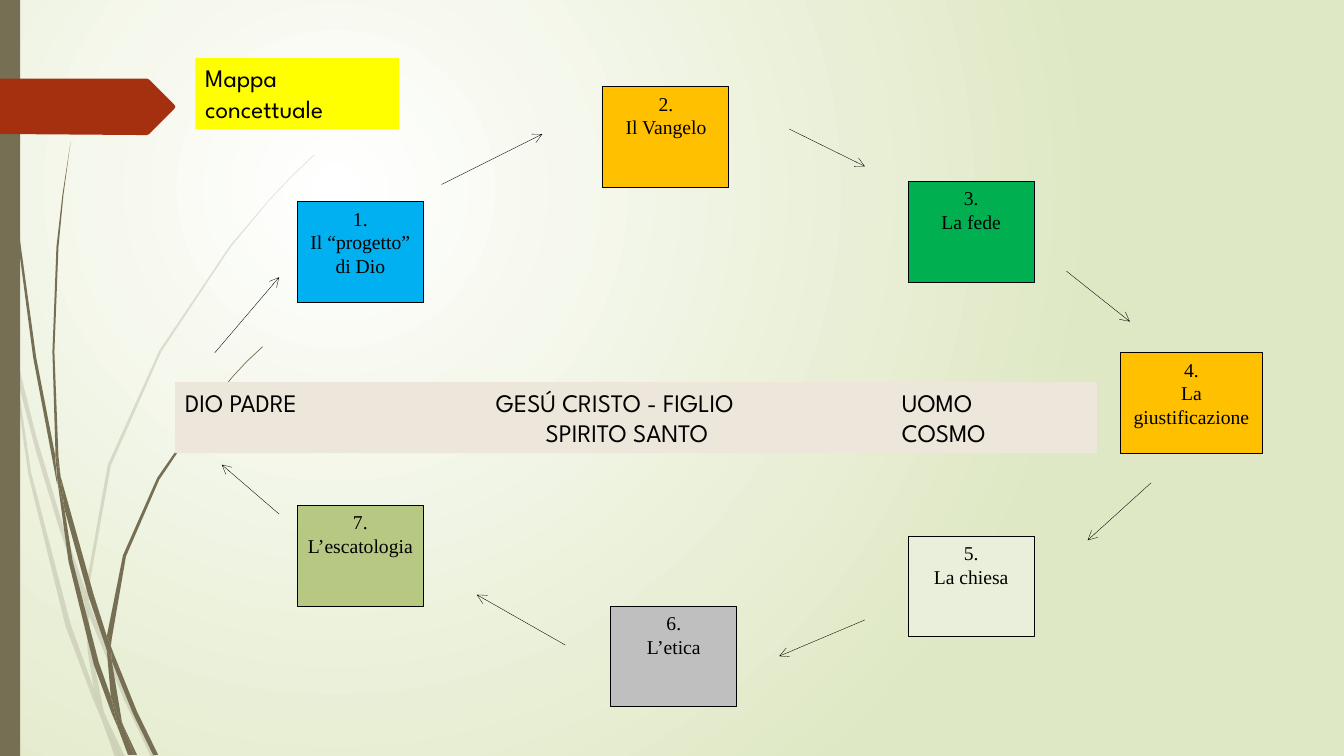
from lxml import etree
from pptx import Presentation
from pptx.dml.color import RGBColor
from pptx.enum import shapes, text
from pptx.oxml import ns
from pptx.util import Pt

BLACK = RGBColor(0x00, 0x00, 0x00)
WHITE = RGBColor(0xFF, 0xFF, 0xFF)
PALE_GREEN = RGBColor(0xDF, 0xE8, 0xC4)
OLIVE = RGBColor(0x76, 0x6F, 0x54)
RUST = RGBColor(0xA5, 0x30, 0x10)
YELLOW = RGBColor(0xFF, 0xFF, 0x00)
SAND = RGBColor(0xED, 0xE6, 0xDB)
BLUE = RGBColor(0x00, 0xB0, 0xF0)
AMBER = RGBColor(0xFF, 0xC0, 0x00)
GREEN = RGBColor(0x00, 0xB0, 0x50)
MINT = RGBColor(0xEA, 0xEF, 0xDB)
GREY = RGBColor(0xBF, 0xBF, 0xBF)
MOSS = RGBColor(0xB6, 0xC8, 0x82)

BODY_FONT = "Times New Roman"
TITLE_FONT = "League Spartan"

STEM_UNIT = Pt(0.72)
FAINT_STEMS = [
    [(11, 350), (9, 322), (0, 282), (0, 299), (10, 344)],
    [(58, 522), (84, 599), (85, 586), (62, 520), (36, 433), (14, 345), (17, 376), (36, 449)],
    [(92, 607), (88, 596), (88, 610), (123, 694), (150, 751), (155, 751), (127, 692)],
    [(119, 751), (124, 751), (105, 711)],
    [(93, 683), (70, 619), (31, 469), (17, 376), (11, 350), (28, 470), (65, 621),
     (92, 693), (101, 714), (99, 707)],
    [(84, 599), (87, 646), (93, 683), (96, 692), (105, 711), (103, 706), (91, 646),
     (88, 610), (88, 608)],
    [(88, 584), (110, 462), (160, 349), (229, 245), (268, 198), (290, 175), (312, 154),
     (312, 153), (289, 175), (268, 197), (228, 244), (158, 348), (107, 461), (85, 584),
     (85, 586), (88, 596)],
    [(101, 714), (114, 751), (119, 751)],
    [(88, 608), (88, 610), (88, 596), (85, 586), (84, 599)],
    [(96, 692), (93, 683), (99, 707), (101, 714), (119, 751), (105, 711)],
]
SOLID_STEMS = [
    [(7, 110), (17, 233), (33, 355), (56, 477), (57, 481), (55, 457), (55, 453),
     (36, 355), (19, 232), (8, 109), (5, 48), (4, 0), (3, 0), (4, 48)],
    [(88, 592), (106, 645), (106, 633), (106, 631), (93, 590), (60, 472), (64, 505)],
    [(113, 649), (110, 641), (111, 656), (132, 708), (152, 749), (157, 749), (136, 706)],
    [(110, 691), (98, 657), (72, 556), (64, 505), (57, 477), (68, 557), (93, 659),
     (111, 708), (117, 722), (116, 717)],
    [(60, 472), (58, 453), (54, 349), (58, 245), (63, 193), (70, 141), (62, 193),
     (56, 245), (52, 349), (55, 449)],
    [(133, 749), (136, 749), (122, 719)],
    [(57, 477), (64, 505), (60, 472), (55, 449), (55, 453)],
    [(111, 633), (125, 552), (158, 476), (205, 406), (231, 374), (245, 359), (261, 344),
     (260, 344), (245, 358), (231, 373), (204, 405), (156, 474), (122, 551), (106, 631),
     (110, 641)],
    [(117, 722), (127, 749), (131, 749)],
    [(106, 645), (110, 691), (116, 706), (122, 719), (121, 716), (111, 656), (109, 651)],
    [(106, 645), (109, 651), (111, 656), (110, 641), (106, 631), (106, 633)],
    [(116, 706), (110, 691), (116, 717), (117, 722), (130, 749), (133, 749), (122, 719)],
]
SIGN = [(173, 108), (148, 133), (146, 134), (136, 134), (0, 133), (0, 78), (136, 78),
        (146, 78), (148, 79), (173, 104), (174, 106)]
STEPS = [
    (212.4, 144, 90, BLUE, "Il “progetto” di Dio"),
    (430.7, 61.9, 90, AMBER, "Il Vangelo"),
    (648.7, 129.6, 90, GREEN, "La fede"),
    (800.6, 252, 101, AMBER, "La giustificazione"),
    (648.7, 383, 90, MINT, "La chiesa"),
    (436.3, 433, 90, GREY, "L’etica"),
    (212.4, 361, 90, MOSS, "L’escatologia"),
]
ARROWS = [
    (153.4, 252, 199.4, 198), (315.4, 131.8, 387.4, 95.8),
    (563.8, 92.2, 617.8, 118.8), (761.8, 193.7, 807.1, 229.7),
    (822.2, 344.9, 776.9, 385.9), (617.8, 442.8, 556.6, 468.7),
    (403.9, 460.8, 340.6, 424.8), (199.4, 367.2, 158.4, 331.9),
]


def paint_background(page):
    """Fill the page with a gradient that glows from the upper left."""
    fill = page.background.fill
    fill.gradient()
    for stop, colour in zip(fill.gradient_stops, (WHITE, PALE_GREEN)):
        stop.color.rgb = colour
    linear = next(page.background._cSld.iter(ns.qn("a:lin")))
    glow = etree.Element(ns.qn("a:path"), path="circle")
    etree.SubElement(glow, ns.qn("a:fillToRect"), l="50000", t="50000", r="100000", b="100000")
    linear.getparent().replace(linear, glow)


def paint(shape, colour, outline=None):
    """Give a shape a flat fill and an optional thin outline."""
    shape.shadow.inherit = False
    shape.fill.solid()
    shape.fill.fore_color.rgb = colour
    if outline is None:
        shape.line.fill.background()
    else:
        shape.line.color.rgb = outline
        shape.line.width = Pt(0.75)


def add_outline(page, corners, colour, opacity=100):
    """Draw a closed, filled outline through the corners."""
    builder = page.shapes.build_freeform(*corners[0], scale=STEM_UNIT)
    builder.add_line_segments(corners[1:])
    outline = builder.convert_to_shape()
    paint(outline, colour)
    if opacity < 100:
        tint = next(outline._element.spPr.iter(ns.qn("a:srgbClr")))
        etree.SubElement(tint, ns.qn("a:alpha"), val=str(opacity * 1000))


def add_box(page, left, top, width, height, colour, outline=None):
    """Add a filled rectangle whose text starts at the top."""
    box = page.shapes.add_shape(
        shapes.MSO_SHAPE.RECTANGLE, Pt(left), Pt(top), Pt(width), Pt(height))
    paint(box, colour, outline)
    box.text_frame.word_wrap = True
    box.text_frame.vertical_anchor = text.MSO_ANCHOR.TOP
    return box


def write(box, lines, font, size, alignment, tab_rows=()):
    """Write one paragraph a line, with left tab stops where given."""
    box.text_frame.text = "\n".join(lines)
    for index, para in enumerate(box.text_frame.paragraphs):
        para.alignment = alignment
        if tab_rows:
            tabs = etree.SubElement(para._p.get_or_add_pPr(), ns.qn("a:tabLst"))
            for stop in tab_rows[index]:
                etree.SubElement(tabs, ns.qn("a:tab"), pos=str(Pt(stop)), algn="l")
        para.font.name = font
        para.font.size = Pt(size)
        para.font.color.rgb = BLACK


def add_arrow(page, *ends):
    """Draw a hairline arrow from the first point to the second."""
    arrow = page.shapes.add_connector(shapes.MSO_CONNECTOR.STRAIGHT, *map(Pt, ends))
    arrow.line.color.rgb = BLACK
    arrow.line.width = Pt(0.25)
    etree.SubElement(arrow.line._get_or_add_ln(), ns.qn("a:tailEnd"), type="arrow")
    etree.SubElement(arrow._element.spPr, ns.qn("a:effectLst"))


def main():
    """Build the concept map and save it."""
    deck = Presentation()
    deck.slide_width, deck.slide_height = Pt(960), Pt(540)
    page = deck.slides.add_slide(deck.slide_layouts[6])
    left = text.PP_ALIGN.LEFT

    paint_background(page)
    for corners in FAINT_STEMS:
        add_outline(page, corners, OLIVE, opacity=20)
    for corners in SOLID_STEMS:
        add_outline(page, corners, OLIVE)
    add_box(page, 0, 0, 14.4, 540, OLIVE)
    add_outline(page, SIGN, RUST)

    for number, (x, y, width, colour, label) in enumerate(STEPS, 1):
        box = add_box(page, x, y, width, 72, colour, BLACK)
        write(box, [f"{number}.", label], BODY_FONT, 14, text.PP_ALIGN.CENTER)
    for ends in ARROWS:
        add_arrow(page, *ends)

    band = add_box(page, 125.2, 272.9, 658.5, 50.9, SAND)
    write(band, ["DIO PADRE\tGESÚ CRISTO - FIGLIO\tUOMO", "\tSPIRITO SANTO\tCOSMO"],
          TITLE_FONT, 18, left, [(222, 512), (257.5, 512)])
    title = add_box(page, 139.5, 41.3, 145.5, 50.9, YELLOW)
    write(title, ["Mappa concettuale"], TITLE_FONT, 18, left)

    deck.save("out.pptx")


if __name__ == "__main__":
    main()
